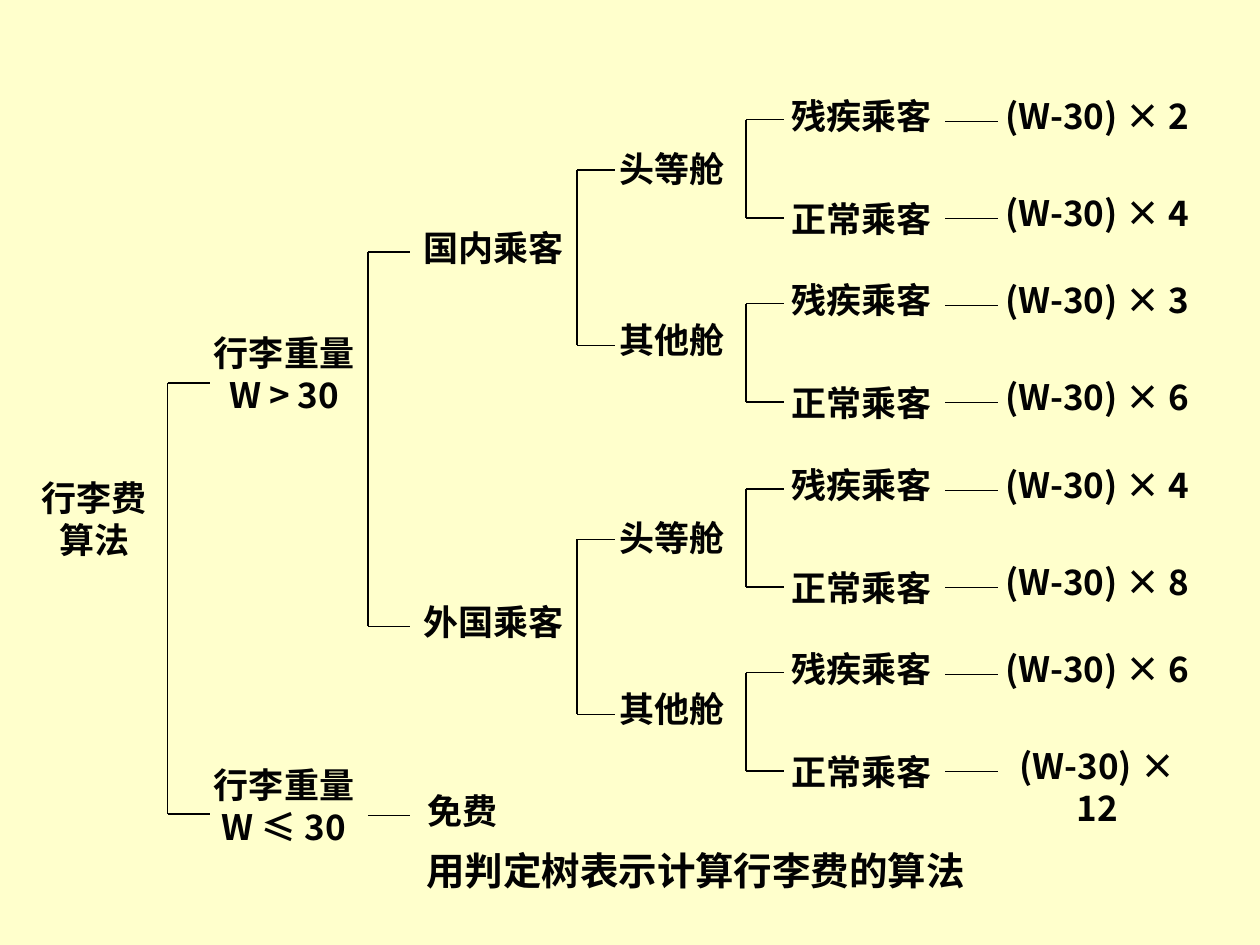
from pptx import Presentation
from pptx.dml.color import RGBColor
from pptx.enum.shapes import MSO_CONNECTOR
from pptx.enum.text import MSO_ANCHOR, MSO_AUTO_SIZE, PP_ALIGN
from pptx.oxml.ns import qn
from pptx.util import Inches, Pt
from lxml import etree

STRAIGHT = MSO_CONNECTOR.STRAIGHT
TOP = MSO_ANCHOR.TOP
CENTER = PP_ALIGN.CENTER
FIT_SHAPE, NO_FIT = MSO_AUTO_SIZE.SHAPE_TO_FIT_TEXT, MSO_AUTO_SIZE.NONE
LEFT_SIDE = 1

BACKGROUND = RGBColor(0xFF, 0xFF, 0xCC)
INK = RGBColor(0x02, 0x02, 0x02)
LINE = RGBColor(0, 0, 0)
CJK_FONT = "Noto Sans CJK SC"
CAPTION_FONT = "Times New Roman"


class TreeSlide:
    """Style and drawing methods for the decision tree."""

    def __init__(self, slide):
        self.slide = slide
        self.line_width = Pt(0.75)
        fill = slide.background.fill
        fill.solid()
        fill.fore_color.rgb = BACKGROUND

    def text(self, words, left, top, width, height, size=20, font=CJK_FONT,
             inset=(0.02, 0.01), fit=FIT_SHAPE):
        box = self.slide.shapes.add_textbox(
            Inches(left), Inches(top), Inches(width), Inches(height))
        frame = box.text_frame
        frame.word_wrap = True
        frame.auto_size = fit
        frame.vertical_anchor = TOP
        frame.margin_left = frame.margin_right = Inches(inset[0])
        frame.margin_top = frame.margin_bottom = Inches(inset[1])
        paragraph = frame.paragraphs[0]
        paragraph.alignment = CENTER
        run = paragraph.add_run()
        run.text = words
        run.font.size = Pt(size)
        run.font.bold = True
        run.font.color.rgb = INK
        run.font.name = font
        east_asian = etree.SubElement(run.font._element, qn("a:ea"))
        east_asian.set("typeface", CJK_FONT)
        return box

    def node(self, words, left, top, width=1.17, lines=1):
        return self.text(words, left, top, width, 0.36 if lines == 1 else 0.69)

    def fee(self, words, left, top):
        return self.text(words, left, top, 1.58, 0.45, fit=NO_FIT)

    def line(self, x1, y1, x2, y2):
        connector = self.slide.shapes.add_connector(
            STRAIGHT, Inches(x1), Inches(y1), Inches(x2), Inches(y2))
        connector.line.color.rgb = LINE
        connector.line.width = self.line_width
        etree.SubElement(connector._element.spPr, qn("a:effectLst"))
        return connector

    def bracket(self, left, top, bottom, arm):
        self.line(left, top, left + arm, top)
        self.line(left, bottom, left + arm, bottom)
        self.line(left, top, left, bottom)


def draw_fare_pair(tree, top, factors):
    """Disabled and normal passengers of one cabin, each with its fee."""
    tree.bracket(5.92, top + 0.21, top + 0.99, 0.3)
    rows = zip(("残疾乘客", "正常乘客"), (0, 0.82), (0, 0.77), factors)
    for passenger, name_offset, fee_offset, factor in rows:
        tree.node(passenger, 6.25, top + name_offset)
        fee_top = top + fee_offset
        fee = tree.fee(f"(W-30) × {factor}", 7.92, fee_top)
        link = tree.line(7.5, fee_top + 0.225, 7.92, fee_top + 0.225)
        link.end_connect(fee, LEFT_SIDE)


def draw_nationality(tree, passenger, name_top, top, cabin_factors):
    """One nationality with its two cabins."""
    tree.node(passenger, 3.33, name_top)
    tree.bracket(4.58, top + 0.61, top + 2, 0.3)
    rows = zip(("头等舱", "其他舱"), (0.42, 1.78), (0, 1.46), cabin_factors)
    for cabin, cabin_offset, pair_offset, factors in rows:
        tree.node(cabin, 4.75, top + cabin_offset)
        draw_fare_pair(tree, top + pair_offset, factors)


def main():
    deck = Presentation()
    deck.slide_width, deck.slide_height = Inches(10), Inches(7.5)
    blank = deck.slide_layouts[6]
    tree = TreeSlide(deck.slides.add_slide(blank))

    # Root and the two weight classes
    tree.node("行李费算法", 0.25, 3.77, width=1, lines=2)
    tree.bracket(1.33, 3.04, 6.46, 0.34)
    tree.node("行李重量W > 30", 1.67, 2.62, lines=2)
    tree.node("行李重量W ≤ 30", 1.67, 6.05, lines=2)

    # Light luggage is free
    tree.line(2.92, 6.47, 3.25, 6.47)
    tree.node("免费", 3.17, 6.26, width=1)

    # Heavy luggage depends on nationality, cabin and passenger
    tree.bracket(2.92, 2, 4.97, 0.33)
    draw_nationality(tree, "国内乘客", 1.79, 0.74, ((2, 4), (3, 6)))
    draw_nationality(tree, "外国乘客", 4.76, 3.67, ((4, 8), (6, 12)))

    # Caption
    tree.text("用判定树表示计算行李费的算法", 2.81, 6.67, 5.42, 0.47,
              size=22, font=CAPTION_FONT, inset=(0.1, 0.05))

    deck.save("out.pptx")


if __name__ == "__main__":
    main()
